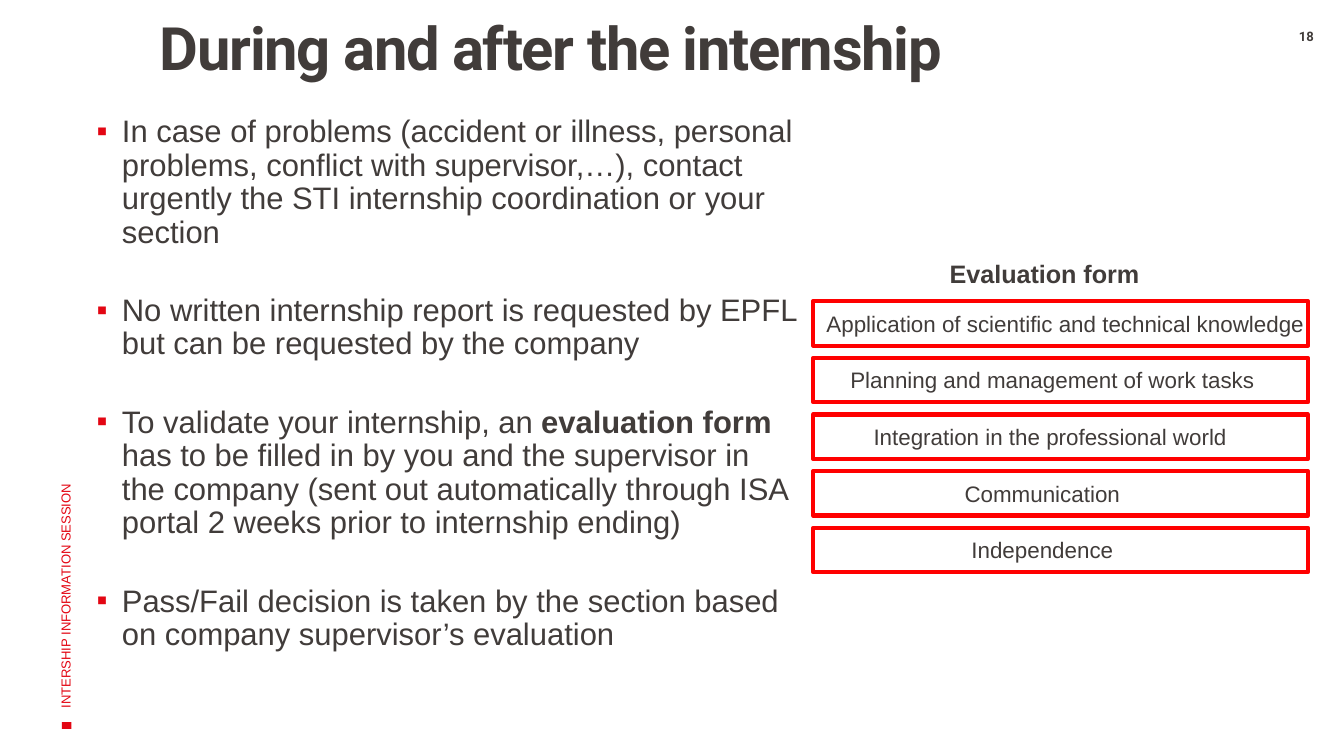
import pptx
import pptx.dml.color
import pptx.enum.shapes
import pptx.enum.text
import pptx.oxml
import pptx.oxml.ns
import pptx.util
from pptx.util import Cm

RED, DARK, FRAME = "E30613", "413C3A", "FF0000"
ANCHOR = pptx.enum.text.MSO_ANCHOR
RECTANGLE = pptx.enum.shapes.MSO_SHAPE.RECTANGLE


def rgb(value):
    return pptx.dml.color.RGBColor.from_string(value)


def format_runs(p, size, colour=DARK, name="Arial", bold=False):
    for r in p.runs:
        r.font.size = pptx.util.Pt(size)
        r.font.name = name
        r.font.bold = bold
        r.font.color.rgb = rgb(colour)


prs = pptx.Presentation()
prs.slide_width, prs.slide_height = Cm(25.4), Cm(14.28)
s = prs.slides.add_slide(prs.slide_layouts[1])

# Title
title = s.shapes.title
title.left, title.top, title.width, title.height = Cm(2.51), Cm(0.36), Cm(18.67), Cm(2.97)
tf = title.text_frame
tf.text = "During and after the internship"
tf.auto_size = pptx.enum.text.MSO_AUTO_SIZE.NONE
tf.vertical_anchor = ANCHOR.TOP
tf.margin_left, tf.margin_top, tf.margin_right, tf.margin_bottom = Cm(0.51), 0, Cm(0.2), Cm(0.13)
p = tf.paragraphs[0]
p.alignment = pptx.enum.text.PP_ALIGN.LEFT
p.line_spacing = 0.9
format_runs(p, 32, name="Roboto", bold=True)
p.runs[0].font._element.set("spc", "-70")

# Bullet list: each paragraph is a list of (text, bold) runs
bullets = [
    [("In case of problems (accident or illness, personal problems, conflict with "
      "supervisor,…), contact urgently the STI internship coordination or your section", False)],
    [("No written internship report is requested by EPFL but can be requested "
      "by the company", False)],
    [("To validate your internship, an ", False), ("evaluation form ", True),
     ("has to be filled in by you and the supervisor in the company (sent out automatically "
      "through ISA portal 2 weeks prior to internship ending)", False)],
    [("Pass/Fail decision is taken by the section based on company supervisor’s evaluation",
      False)],
]
body = s.placeholders[1]
body.left, body.top, body.width, body.height = Cm(1.57), Cm(2.06), Cm(13.77), Cm(11.73)
tf = body.text_frame
tf.auto_size = pptx.enum.text.MSO_AUTO_SIZE.NONE
tf.vertical_anchor = ANCHOR.TOP
ns = pptx.oxml.ns.nsdecls("a")
for i, runs in enumerate(bullets):
    p = tf.add_paragraph() if i else tf.paragraphs[0]
    p.line_spacing = 0.9
    p.space_before = pptx.util.Pt(12 if i else 0)
    p.space_after = pptx.util.Pt(12)
    pPr = p._p.get_or_add_pPr()
    pPr.set("marL", str(Cm(0.48)))
    pPr.set("indent", str(-Cm(0.48)))
    for xml in (f'<a:buClr {ns}><a:srgbClr val="{RED}"/></a:buClr>',
                f'<a:buFont {ns} typeface="Arial"/>',
                f'<a:buChar {ns} char="▪"/>'):
        pPr.append(pptx.oxml.parse_xml(xml))
    for text, _ in runs:
        p.add_run().text = text
    format_runs(p, 16.6)
    for r, (_, bold) in zip(p.runs, runs):
        r.font.bold = bold

# Vertical session name with its marker
marker = s.shapes.add_shape(RECTANGLE, Cm(1.17), Cm(13.64), Cm(0.18), Cm(0.13))
marker.shadow.inherit = False
marker.fill.solid()
marker.fill.fore_color.rgb = rgb(RED)
marker.line.fill.background()

session = s.shapes.add_textbox(Cm(-3.4), Cm(7.72), Cm(9.27), Cm(2.54))
session.rotation = 270
tf = session.text_frame
tf.word_wrap = True
tf.vertical_anchor = ANCHOR.MIDDLE
tf.text = "INTERSHIP INFORMATION SESSION"
format_runs(tf.paragraphs[0], 7, RED)

# Page number
number = s.shapes.add_textbox(Cm(23.98), Cm(0.53), Cm(1.42), Cm(0.46))
tf = number.text_frame
tf.word_wrap = True
tf.margin_top = tf.margin_bottom = 0
tf.text = "18"
tf.paragraphs[0].alignment = pptx.enum.text.PP_ALIGN.CENTER
format_runs(tf.paragraphs[0], 7, name="Roboto", bold=True)

# Evaluation form: heading, then framed criteria (label, left, width)
heading = s.shapes.add_textbox(Cm(17.7), Cm(4.75), Cm(4.14), Cm(0.84))
heading.text_frame.text = "Evaluation form"
format_runs(heading.text_frame.paragraphs[0], 13.5, bold=True)

criteria = [
    ("Application of scientific and technical knowledge", 15.37, 9.6),
    ("Planning and management of work tasks", 15.82, 8.2),
    ("Integration in the professional world", 16.26, 7.24),
    ("Communication", 17.98, 3.48),
    ("Independence", 18.11, 3.2),
]
for i, (label, left, width) in enumerate(criteria):
    top = 5.69 + i * 1.07
    frame = s.shapes.add_shape(RECTANGLE, Cm(15.37), Cm(top), Cm(9.35), Cm(0.84))
    frame.shadow.inherit = False
    frame.fill.background()
    frame.line.color.rgb = rgb(FRAME)
    frame.line.width = pptx.util.Pt(2.25)
    box = s.shapes.add_textbox(Cm(left), Cm(top + 0.04), Cm(width), Cm(0.76))
    box.text_frame.text = label
    format_runs(box.text_frame.paragraphs[0], 12)

prs.save("out.pptx")
